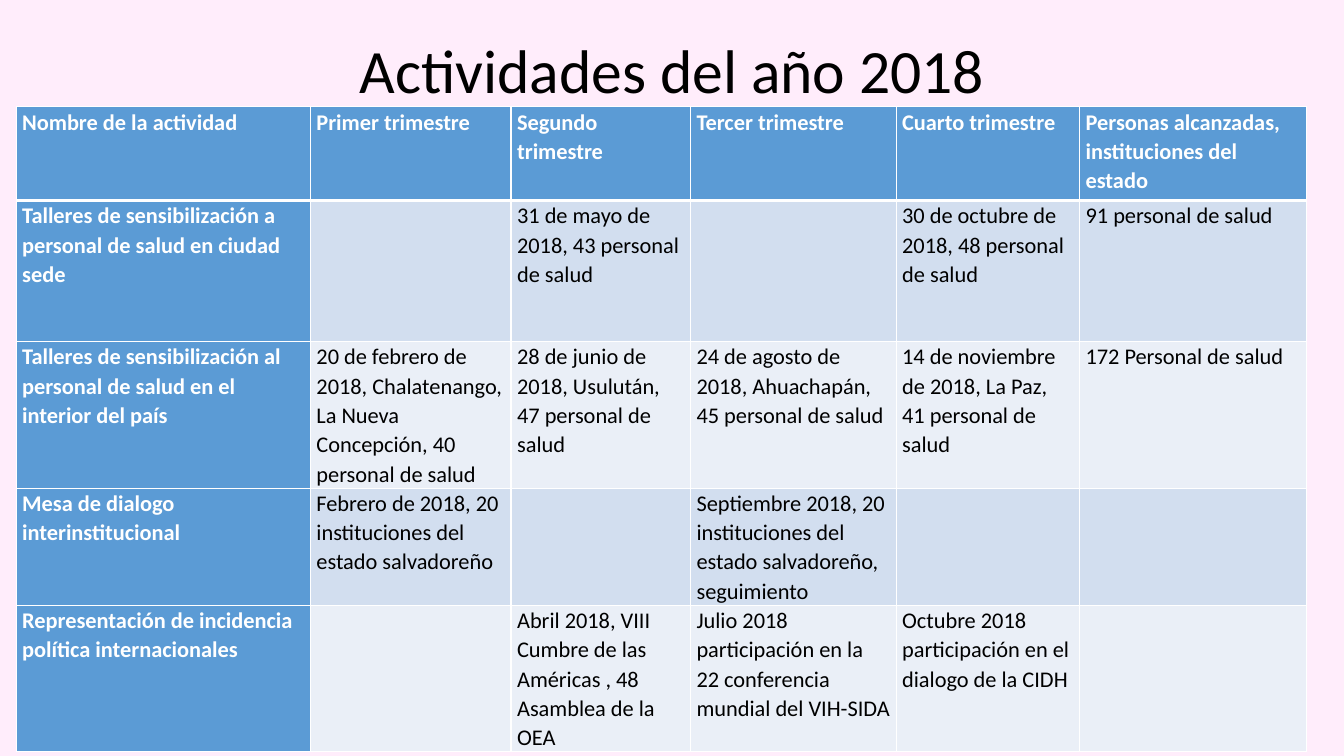
from lxml.etree import SubElement
from pptx import Presentation
from pptx.dml.color import RGBColor
from pptx.enum.text import MSO_ANCHOR as Anchor, PP_ALIGN as Align
from pptx.oxml.ns import qn
from pptx.util import Inches, Pt

PINK = RGBColor(0xFF, 0xED, 0xFB)
BLUE = RGBColor(0x5B, 0x9B, 0xD5)
BAND_DARK = RGBColor(0xD2, 0xDE, 0xEF)
BAND_LIGHT = RGBColor(0xEA, 0xEF, 0xF7)
WHITE = RGBColor(0xFF, 0xFF, 0xFF)
BLACK = RGBColor(0x00, 0x00, 0x00)

# Column widths and row heights as percentages of the slide
COLUMNS = [21.9, 14.93, 13.35, 15.3, 13.65, 16.88]
ROWS = [12.4, 18.67, 18.67, 14.67, 18.13]

ACTIVITIES = [
    ["Nombre de la actividad", "Primer trimestre", "Segundo trimestre",
     "Tercer trimestre", "Cuarto trimestre",
     "Personas alcanzadas, instituciones del estado"],
    ["Talleres de sensibilización a personal de salud en ciudad sede", "",
     "31 de mayo de 2018, 43 personal de salud", "",
     "30 de octubre de 2018, 48 personal de salud", "91 personal de salud"],
    ["Talleres de sensibilización al personal de salud en el interior del país",
     "20 de febrero de 2018, Chalatenango, La Nueva Concepción, 40 personal de salud",
     "28 de junio de 2018, Usulután, 47 personal de salud",
     "24 de agosto de 2018, Ahuachapán, 45 personal de salud",
     "14 de noviembre de 2018, La Paz, 41 personal de salud",
     "172 Personal de salud"],
    ["Mesa de dialogo interinstitucional",
     "Febrero de 2018, 20 instituciones del estado salvadoreño", "",
     "Septiembre 2018, 20 instituciones del estado salvadoreño, seguimiento", "", ""],
    ["Representación de incidencia política internacionales", "",
     "Abril 2018, VIII Cumbre de las Américas , 48 Asamblea de la OEA",
     "Julio 2018 participación en la 22 conferencia mundial del VIH-SIDA",
     "Octubre 2018 participación en el dialogo de la CIDH", ""],
]


class ActivitySlide:
    """Holds the style and the slide; lengths are percentages of the slide."""
    font = "Calibri"

    def __init__(self, deck):
        self.width, self.height = deck.slide_width, deck.slide_height
        self.slide = deck.slides.add_slide(deck.slide_layouts[5])
        background = self.slide.background.fill
        background.solid()
        background.fore_color.rgb = PINK

    def x(self, percent):
        return int(self.width * percent / 100)

    def y(self, percent):
        return int(self.height * percent / 100)

    def add_text(self, paragraph, text, size, color, spacing, bold=False):
        paragraph.line_spacing = spacing
        run = paragraph.add_run()
        run.text = text
        run.font.name, run.font.size, run.font.bold = self.font, Pt(size), bold
        run.font.color.rgb = color

    def title(self, text, left, top, width, height):
        heading = self.slide.shapes.title
        heading.left, heading.top = self.x(left), self.y(top)
        heading.width, heading.height = self.x(width), self.y(height)
        frame = heading.text_frame
        frame.vertical_anchor = Anchor.MIDDLE
        frame.paragraphs[0].alignment = Align.CENTER
        self.add_text(frame.paragraphs[0], text, 44, BLACK, 0.9)

    def border(self, cell, side, points):
        line = SubElement(cell._tc.get_or_add_tcPr(), qn(f"a:ln{side}"), w=str(Pt(points)))
        fill = SubElement(line, qn("a:solidFill"))
        SubElement(fill, qn("a:srgbClr"), val=str(WHITE))

    def cell(self, cell, text, row, column):
        heading = row == 0 or column == 0
        cell.margin_left = cell.margin_right = Inches(0.06)
        cell.margin_top = cell.margin_bottom = 0
        # The rule under the header row is thicker than the others
        thick_side = {0: "B", 1: "T"}.get(row)
        for side in "LRTB":
            self.border(cell, side, 3 if side == thick_side else 1)
        cell.fill.solid()
        band = BAND_DARK if row % 2 else BAND_LIGHT
        cell.fill.fore_color.rgb = BLUE if heading else band
        if text:
            self.add_text(cell.text_frame.paragraphs[0], text, 16,
                          WHITE if heading else BLACK, 1.07, heading)

    def table(self, content, left, top, widths, heights):
        table = self.slide.shapes.add_table(
            len(heights), len(widths), self.x(left), self.y(top),
            self.x(sum(widths)), self.y(sum(heights))).table
        for column, width in zip(table.columns, widths):
            column.width = self.x(width)
        for row, height in zip(table.rows, heights):
            row.height = self.y(height)
        for r, texts in enumerate(content):
            for c, text in enumerate(texts):
                self.cell(table.cell(r, c), text, r, c)


def main():
    deck = Presentation()
    deck.slide_width, deck.slide_height = Inches(13.33), Inches(7.5)
    year = ActivitySlide(deck)
    # Heading
    year.title("Actividades del año 2018", 6.9, 0, 86.25, 19.33)
    # Activities by quarter
    year.table(ACTIVITIES, 1.2, 14.13, COLUMNS, ROWS)
    deck.save("out.pptx")


if __name__ == "__main__":
    main()
